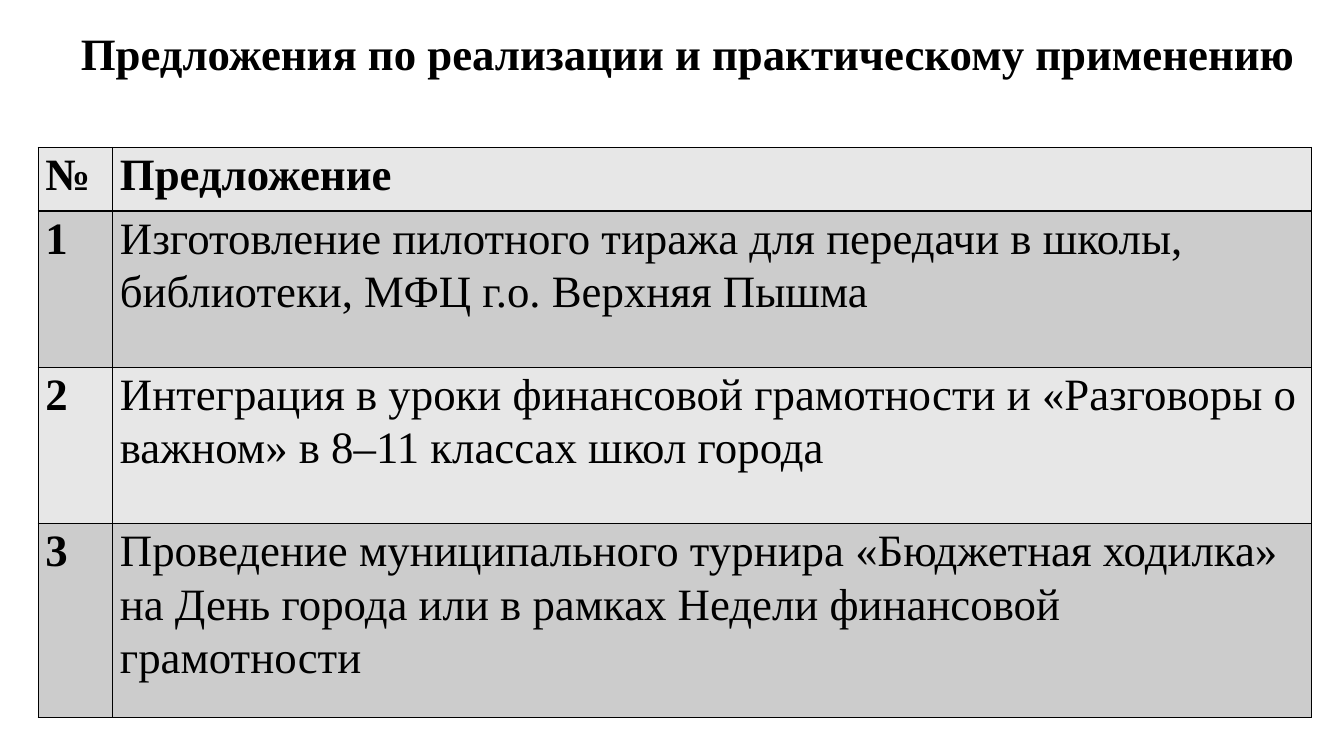
import pptx
import pptx.util
import pptx.dml.color
import pptx.enum.text
import pptx.oxml
import pptx.oxml.ns

HEAD = "Предложения по реализации и практическому применению"
ROWS = [
    ("№", "Предложение"),
    ("1", "Изготовление пилотного тиража для передачи в школы, библиотеки, МФЦ г.о. Верхняя Пышма"),
    ("2", "Интеграция в уроки финансовой грамотности и «Разговоры о важном» в 8–11 классах школ города"),
    ("3", "Проведение муниципального турнира «Бюджетная ходилка» на День города или в рамках Недели финансовой грамотности"),
]


def tint(code):
    return pptx.dml.color.RGBColor.from_string(code)


def write(frame, text, bold=False, align=None, lead=None, after=None):
    para = frame.paragraphs[0]
    para.alignment = align
    para.line_spacing = lead
    para.space_after = after
    run = para.add_run()
    run.text = text
    run.font.name = Deck.face
    run.font.size = pptx.util.Pt(Deck.size)
    run.font.bold = bold
    run.font.color.rgb = tint(Deck.ink)


class Deck:
    """Hold the style and the current slide, laid out on a grid of 100 by 100."""

    face = "Times New Roman"
    size = 32
    ink = "000000"
    bands = ("E7E7E7", "CCCCCC")

    def __init__(self):
        self.show = pptx.Presentation()
        self.show.slide_width = pptx.util.Inches(13.33)
        self.show.slide_height = pptx.util.Inches(7.5)
        self.slide = self.show.slides.add_slide(self.show.slide_layouts[6])

    def col(self, count):
        return round(self.show.slide_width * count / 100)

    def row(self, count):
        return round(self.show.slide_height * count / 100)

    def title(self, text, left, top, width, height):
        box = self.slide.shapes.add_textbox(
            self.col(left), self.row(top), self.col(width), self.row(height))
        frame = box.text_frame
        frame.word_wrap = False
        frame.auto_size = pptx.enum.text.MSO_AUTO_SIZE.SHAPE_TO_FIT_TEXT
        frame.vertical_anchor = pptx.enum.text.MSO_ANCHOR.MIDDLE
        write(frame, text, bold=True, align=pptx.enum.text.PP_ALIGN.CENTER)

    def border(self, cell):
        props = cell._tc.get_or_add_tcPr()
        for side in "LRTB":
            props.append(pptx.oxml.parse_xml(
                f'<a:ln{side} {pptx.oxml.ns.nsdecls("a")} w="{pptx.util.Pt(1)}">'
                f'<a:solidFill><a:srgbClr val="{self.ink}"/></a:solidFill></a:ln{side}>'))

    def cell(self, cell, text, bold, fill):
        cell.margin_left = cell.margin_right = pptx.util.Inches(0.07)
        cell.margin_top = cell.margin_bottom = 0
        self.border(cell)
        cell.fill.solid()
        cell.fill.fore_color.rgb = tint(fill)
        write(cell.text_frame, text, bold=bold, lead=1.07, after=pptx.util.Pt(8))

    def table(self, rows, left, top, widths, heights):
        table = self.slide.shapes.add_table(
            len(rows), len(widths), self.col(left), self.row(top),
            self.col(sum(widths)), self.row(sum(heights))).table
        table.first_row = table.horz_banding = False
        for column, width in zip(table.columns, widths):
            column.width = self.col(width)
        for i, (texts, height) in enumerate(zip(rows, heights)):
            table.rows[i].height = self.row(height)
            for j, text in enumerate(texts):
                self.cell(table.cell(i, j), text, i == 0 or j == 0, self.bands[i % 2])


def main():
    deck = Deck()
    deck.table(ROWS, 2.85, 19.5, (5.55, 89.2), (8.4, 20.67, 20.67, 25.73))
    deck.title(HEAD, 4.8, 2.67, 92.8, 8.53)
    deck.show.save("out.pptx")


if __name__ == "__main__":
    main()
